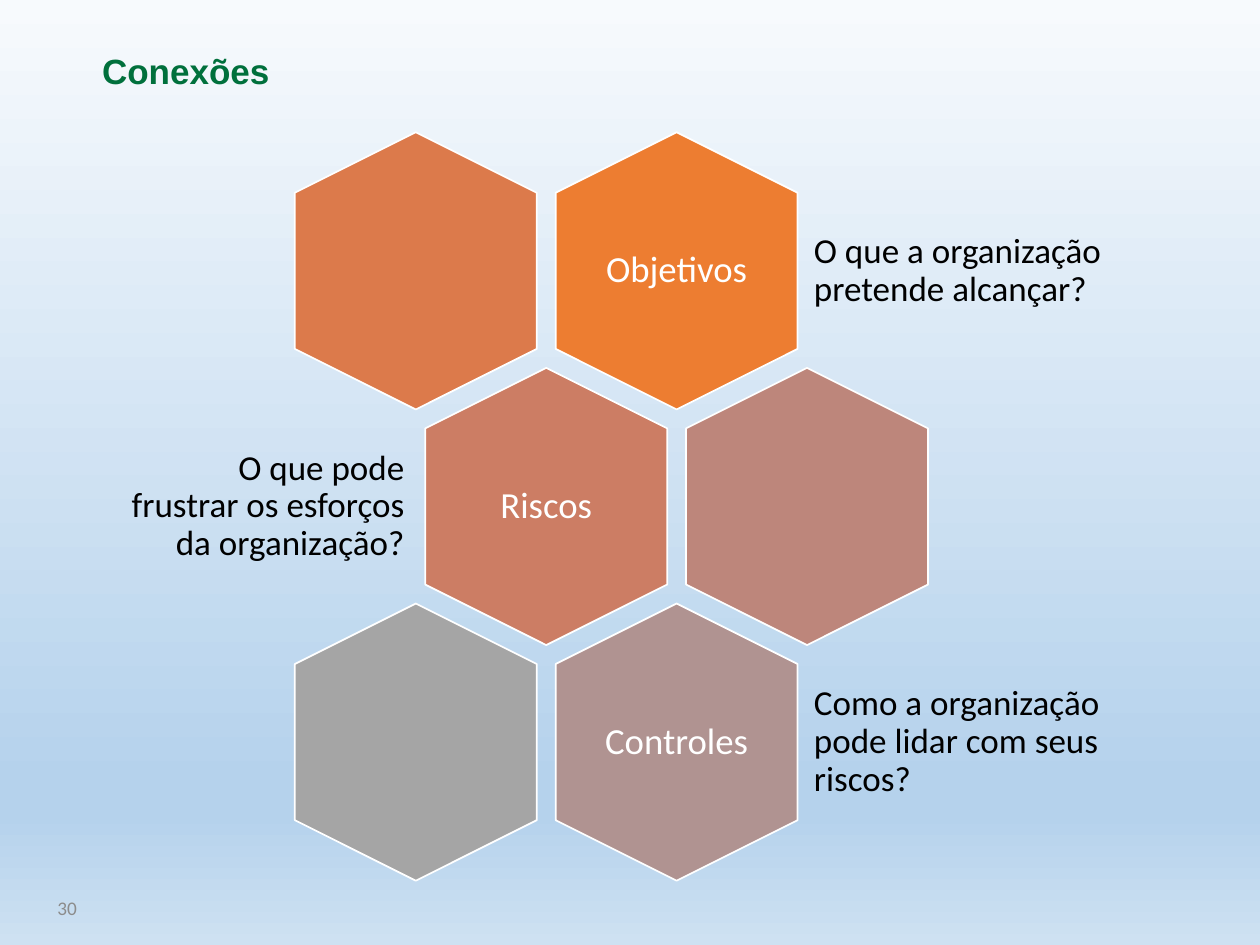
import copy

import pptx
import pptx.dml.color
import pptx.enum.shapes
import pptx.enum.text
import pptx.oxml.ns
import pptx.util

Inches = pptx.util.Inches
RGBColor = pptx.dml.color.RGBColor
ALIGN = pptx.enum.text.PP_ALIGN
ANCHOR = pptx.enum.text.MSO_ANCHOR

GREEN = RGBColor(0x00, 0x70, 0x3C)
GRAY = RGBColor(0x8C, 0x8C, 0x8C)
WHITE = RGBColor(0xFF, 0xFF, 0xFF)
BLACK = RGBColor(0x00, 0x00, 0x00)
SKY = [
    (0, RGBColor(0xF7, 0xFA, 0xFD)),
    (0.83, RGBColor(0xB5, 0xD2, 0xEC)),
    (0.86, RGBColor(0xB5, 0xD2, 0xEC)),
    (1, RGBColor(0xCE, 0xE1, 0xF2)),
]

TITLE = "Conexões"
PAGE_NUMBER = "30"
# Each row: label, question, column of the labelled hexagon, its colour, colour of its plain neighbour
ROWS = [
    ("Objetivos", "O que a organização pretende alcançar?", 1,
     RGBColor(0xED, 0x7D, 0x31), RGBColor(0xDC, 0x7A, 0x4B)),
    ("Riscos", "O que pode frustrar os esforços da organização?", 0,
     RGBColor(0xCC, 0x7D, 0x64), RGBColor(0xBD, 0x86, 0x7B)),
    ("Controles", "Como a organização pode lidar com seus riscos?", 1,
     RGBColor(0xB0, 0x93, 0x91), RGBColor(0xA5, 0xA5, 0xA5)),
]

HEX_LENGTH, HEX_WIDTH = 2.2, 1.92
FIRST_X, FIRST_Y = 3.3, 2.15  # centre of the top left hexagon
COLUMN_STEP, ROW_STEP = 2.07, 1.87
LABEL_WIDTH, LABEL_HEIGHT = 1.32, 1.52
QUESTION_HEIGHT = 1.32
RIGHT_QUESTION = (6.38, 2.46, ALIGN.LEFT)
LEFT_QUESTION = (0.91, 2.38, ALIGN.RIGHT)


def paint_background(slide):
    fill = slide.background.fill
    fill.gradient()
    fill.gradient_angle = 270
    stop_list = slide.element.find(".//" + pptx.oxml.ns.qn("a:gsLst"))
    while len(stop_list) < len(SKY):
        stop_list.append(copy.deepcopy(stop_list[0]))
    for stop, (position, color) in zip(fill.gradient_stops, SKY):
        stop.position = position
        stop.color.rgb = color


def write(frame, text, size, color, align, font="Calibri", bold=False):
    frame.word_wrap = True
    paragraph = frame.paragraphs[0]
    paragraph.alignment = align
    run = paragraph.add_run()
    run.text = text
    run.font.size = pptx.util.Pt(size)
    run.font.name = font
    run.font.bold = bold
    run.font.color.rgb = color
    return paragraph


def add_text(slide, box, text, size, color, align, inset):
    frame = slide.shapes.add_textbox(*map(Inches, box)).text_frame
    frame.vertical_anchor = ANCHOR.MIDDLE
    frame.margin_left = frame.margin_right = Inches(inset)
    frame.margin_top = frame.margin_bottom = Inches(inset)
    write(frame, text, size, color, align).line_spacing = 0.9


def add_hexagon(slide, x, y, color):
    """Add a point-up hexagon centred on x, y."""
    hexagon = slide.shapes.add_shape(
        pptx.enum.shapes.MSO_SHAPE.HEXAGON,
        Inches(x - HEX_LENGTH / 2), Inches(y - HEX_WIDTH / 2),
        Inches(HEX_LENGTH), Inches(HEX_WIDTH))
    hexagon.rotation = 90
    hexagon.adjustments[0] = 0.25
    hexagon.shadow.inherit = False
    hexagon.fill.solid()
    hexagon.fill.fore_color.rgb = color
    hexagon.line.color.rgb = WHITE
    hexagon.line.width = pptx.util.Pt(1)


def add_row(slide, index, label, question, column, color, plain_color):
    y = FIRST_Y + index * ROW_STEP
    row_x = FIRST_X + index % 2 * COLUMN_STEP / 2
    x = row_x + column * COLUMN_STEP
    add_hexagon(slide, x, y, color)
    add_text(slide, (x - LABEL_WIDTH / 2, y - LABEL_HEIGHT / 2, LABEL_WIDTH, LABEL_HEIGHT),
             label, 21, WHITE, ALIGN.CENTER, 0.05)
    left, width, align = RIGHT_QUESTION if column else LEFT_QUESTION
    add_text(slide, (left, y - QUESTION_HEIGHT / 2, width, QUESTION_HEIGHT),
             question, 20, BLACK, align, 0.08)
    add_hexagon(slide, row_x + (1 - column) * COLUMN_STEP, y, plain_color)


def main():
    deck = pptx.Presentation()
    deck.slide_width, deck.slide_height = Inches(10), Inches(7.5)
    slide = deck.slides.add_slide(deck.slide_layouts[5])
    paint_background(slide)

    add_text(slide, (0.21, 7.09, 0.5, 0.25), PAGE_NUMBER, 11, GRAY, ALIGN.RIGHT, 0.1)

    title = slide.shapes.title
    title.left, title.top, title.width, title.height = map(Inches, (0.71, 0.34, 7.14, 0.44))
    title.text_frame.vertical_anchor = ANCHOR.TOP
    title.text_frame.auto_size = pptx.enum.text.MSO_AUTO_SIZE.SHAPE_TO_FIT_TEXT
    write(title.text_frame, TITLE, 20, GREEN, ALIGN.LEFT, "Arial", True)

    for index, row in enumerate(ROWS):
        add_row(slide, index, *row)

    deck.save("out.pptx")


if __name__ == "__main__":
    main()
